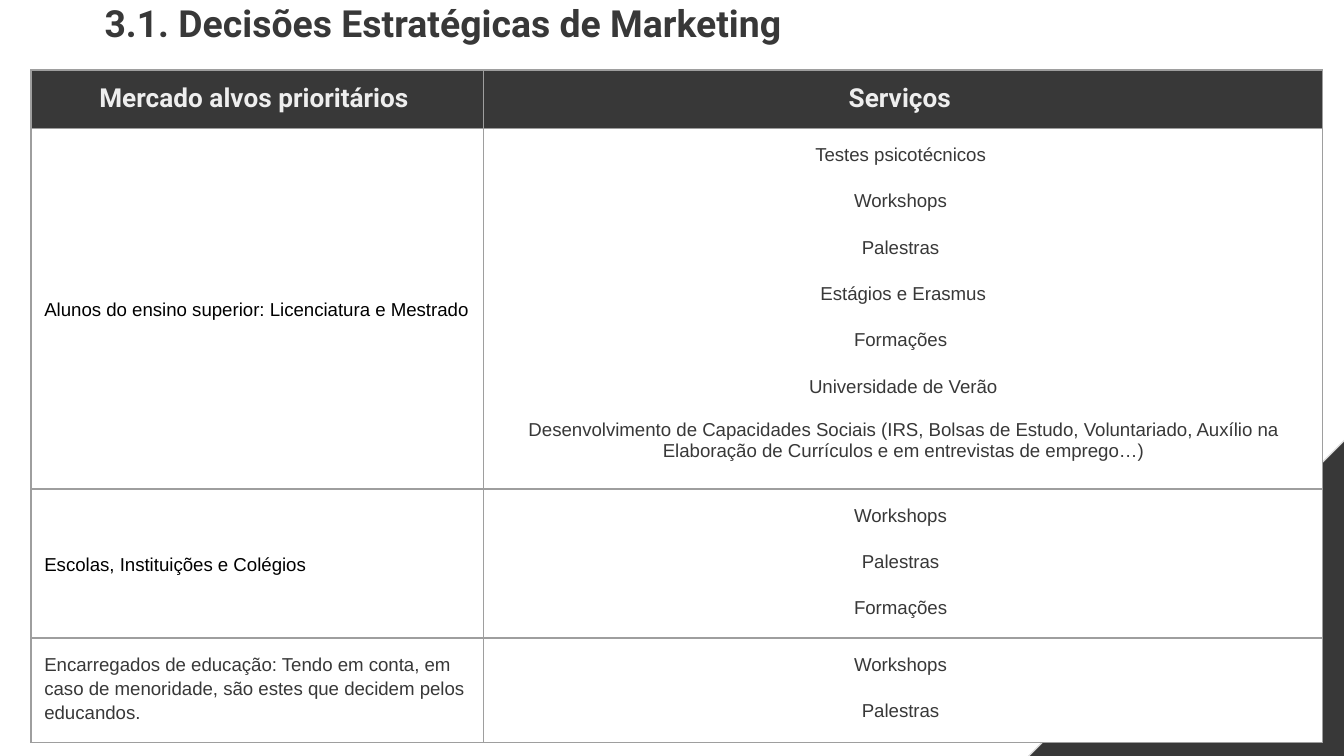
from lxml import etree
from pptx import Presentation
from pptx import util as u
from pptx.dml.color import RGBColor
from pptx.enum import shapes, text
from pptx.oxml import ns

# Colours and type sizes
THEME = {
    "dark": "383838", "light": "EEEEEE", "black": "000000", "white": "FFFFFF",
    "edge": "DBDBDB", "grid": "9E9E9E",
    "head": "Roboto", "body": "Arial",
    "title": 20, "label": 14, "small": 10,
}

COLS = (3.37, 6.24)
ROWS = (0.43, 2.58, 1.07, 0.73)
HEADS = ("Mercado alvos prioritários ", "Serviços ")
TALKS = ["Workshops ", "Palestras "]

# Market, its text colour, its services
MARKETS = [
    ("Alunos do ensino superior: Licenciatura e Mestrado", "black",
     ["Testes psicotécnicos ", *TALKS, "Estágios e Erasmus", "Formações ",
      "Universidade de Verão",
      "Desenvolvimento de Capacidades Sociais (IRS, Bolsas de Estudo, "
      "Voluntariado, Auxílio na Elaboração de Currículos e em entrevistas "
      "de emprego…)"]),
    ("Escolas, Instituições e Colégios", "black", [*TALKS, "Formações "]),
    ("Encarregados de educação: Tendo em conta, em caso de menoridade, "
     "são estes que decidem pelos educandos.", "dark", TALKS),
]


def color(key):
    return RGBColor.from_string(THEME[key])


def apply(item, values):
    for name, value in values.items():
        setattr(item, name, value)


def write(frame, lines, size, face, ink, bold=False, **form):
    """Fill a text frame, one paragraph per line."""
    for i, line in enumerate(lines):
        para = frame.paragraphs[0] if i == 0 else frame.add_paragraph()
        run = para.add_run()
        run.text = line
        apply(run.font, {"size": u.Pt(THEME[size]), "name": THEME[face],
                         "bold": bold})
        run.font.color.rgb = color(ink)
        apply(para, form)
        if i:
            para.space_before = u.Pt(12)


def corner(slide):
    """Dark triangle in the lower right corner."""
    side = u.Inches(5.25)
    shape = slide.shapes.add_shape(shapes.MSO_SHAPE.RIGHT_TRIANGLE,
                                   u.Inches(6.35), u.Inches(1.68), side, side)
    shape.shadow.inherit = False
    shape.fill.solid()
    shape.fill.fore_color.rgb = color("dark")
    shape.line.color.rgb = color("edge")
    shape.line.width = u.Pt(0.75)
    shape._element.spPr.find(ns.qn("a:xfrm")).set("flipH", "1")


def title(slide, line):
    box = slide.shapes.add_textbox(u.Inches(0.68), u.Inches(-0.15),
                                   u.Inches(8.86), u.Inches(0.58))
    frame = box.text_frame
    pad = u.Inches(0.1)
    apply(frame, {"word_wrap": True, "margin_left": pad, "margin_right": pad,
                  "margin_top": pad, "margin_bottom": pad})
    write(frame, [line], "title", "head", "dark", True, line_spacing=1.15)


def style(cell, fill):
    """Margins, thin borders and a plain fill."""
    pad = u.Inches(0.1)
    apply(cell, {"margin_left": pad, "margin_right": pad,
                 "margin_top": pad, "margin_bottom": pad})
    props = cell._tc.get_or_add_tcPr()
    for side in ("lnL", "lnR", "lnT", "lnB"):
        line = etree.SubElement(props, ns.qn("a:" + side), w=str(u.Pt(0.75)))
        solid = etree.SubElement(line, ns.qn("a:solidFill"))
        etree.SubElement(solid, ns.qn("a:srgbClr"), val=THEME["grid"])
    cell.fill.solid()
    cell.fill.fore_color.rgb = color(fill)


def grid(slide):
    """Table of target markets and their services."""
    table = slide.shapes.add_table(
        len(ROWS), len(COLS), u.Inches(0.23), u.Inches(0.52),
        u.Inches(sum(COLS)), u.Inches(sum(ROWS))).table
    apply(table, {"first_row": False, "horz_banding": False})
    for col, width in zip(table.columns, COLS):
        col.width = u.Inches(width)
    for row, height in zip(table.rows, ROWS):
        row.height = u.Inches(height)

    # Header row
    mid = text.PP_ALIGN.CENTER
    for i, head in enumerate(HEADS):
        cell = table.cell(0, i)
        style(cell, "dark")
        write(cell.text_frame, [head], "label", "head", "light", True,
              alignment=mid)

    # Market rows
    for i, (market, ink, offers) in enumerate(MARKETS, 1):
        left, right = table.cell(i, 0), table.cell(i, 1)
        style(left, "white")
        style(right, "white")
        if ink == "black":
            left.vertical_anchor = text.MSO_ANCHOR.MIDDLE
        write(left.text_frame, [market], "small", "body", ink,
              line_spacing=1.15)
        write(right.text_frame, offers, "small", "body", "dark",
              alignment=mid, line_spacing=1.15)
    # The long two-line service is set tighter
    table.cell(1, 1).text_frame.paragraphs[-1].line_spacing = 1.0


def main():
    deck = Presentation()
    wide = u.Inches(10)
    apply(deck, {"slide_width": wide, "slide_height": wide * 9 // 16})
    slide = deck.slides.add_slide(deck.slide_layouts[6])
    corner(slide)
    title(slide, "3.1. Decisões Estratégicas de Marketing")
    grid(slide)
    deck.save("out.pptx")


if __name__ == "__main__":
    main()
